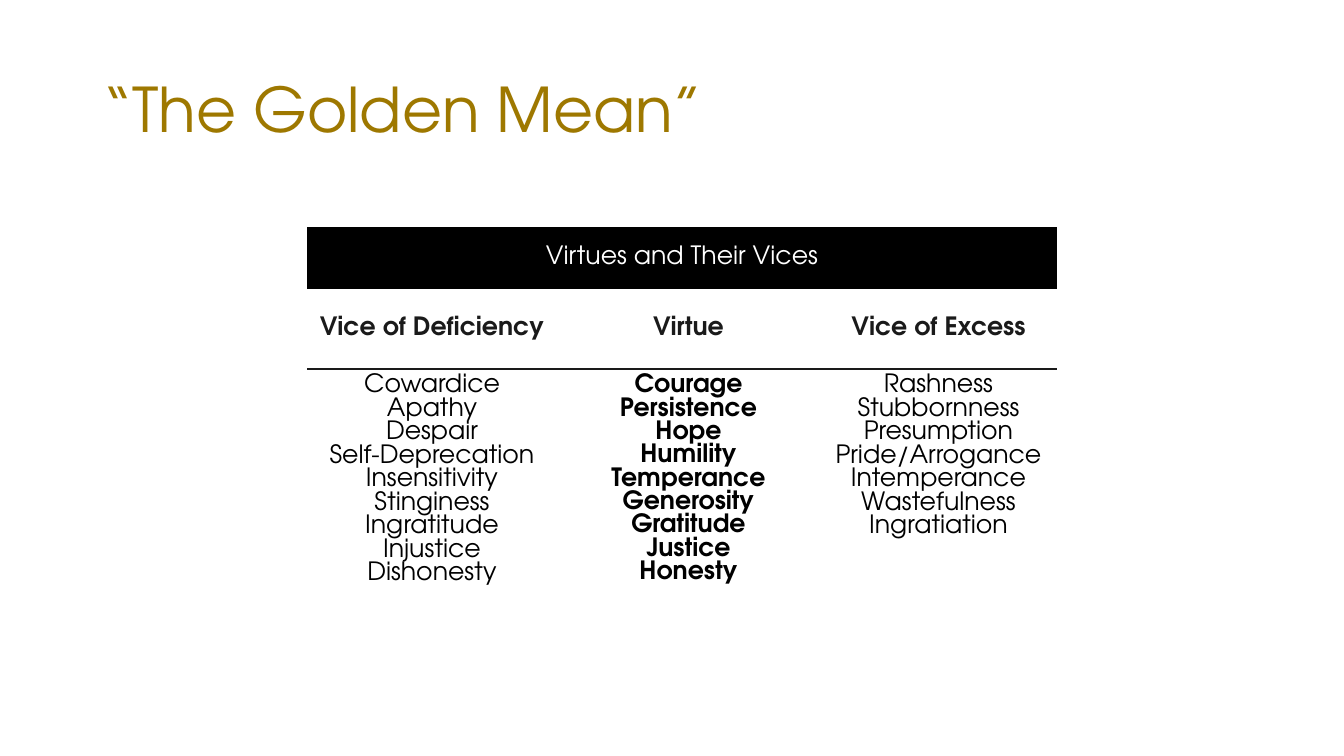
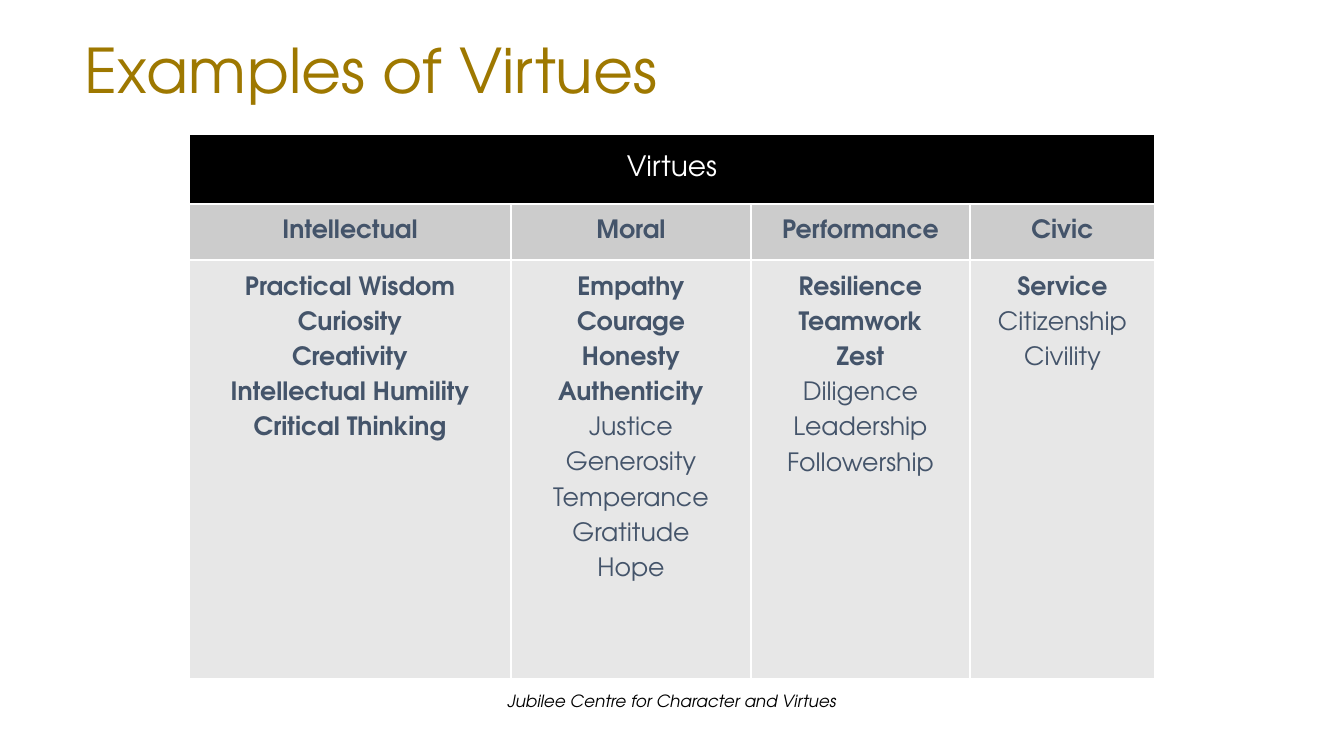
from lxml.etree import SubElement
from pptx import Presentation
from pptx.dml.color import RGBColor
from pptx.enum.text import MSO_ANCHOR as Anchor, PP_ALIGN as Align
from pptx.oxml.ns import qn
from pptx.util import Pt

PX = 914400 / 100.8
FONT = "TeX Gyre Adventor"
COLOURS = {
    "gold": "9E7800", "black": "000000", "ink": "1A1A1A", "white": "FFFFFF",
    "slate": "44546A", "heading": "CCCCCC", "body": "E7E7E7",
}
SIDES = ("lnL", "lnR", "lnT", "lnB")
WHITE_GRID = {side: ("white", 1) for side in SIDES}

GOLDEN_MEAN = {
    "banner": "Virtues and Their Vices",
    "columns": [
        ("Vice of Deficiency", 250, 0,
         ["Cowardice", "Apathy", "Despair", "Self-Deprecation", "Insensitivity",
          "Stinginess", "Ingratitude", "Injustice", "Dishonesty"]),
        ("Virtue", 263, 9,
         ["Courage", "Persistence", "Hope", "Humility", "Temperance",
          "Generosity", "Gratitude", "Justice", "Honesty"]),
        ("Vice of Excess", 237, 0,
         ["Rashness", "Stubbornness", "Presumption", "Pride/Arrogance",
          "Intemperance", "Wastefulness", "Ingratiation"]),
    ],
    "rows": [
        {"height": 62, "fill": "black", "colour": "white", "size": 18, "edges": {}},
        {"height": 80, "fill": "white", "colour": "ink", "size": 18,
         "edges": {"lnB": ("ink", 1.5)}},
        {"height": 328, "fill": "white", "colour": "black", "size": 18,
         "edges": {"lnT": ("ink", 1.5)}, "spacing": 1.0},
    ],
}

VIRTUES = {
    "banner": "Virtues",
    "columns": [
        ("Intellectual", 322, 5,
         ["Practical Wisdom", "Curiosity", "Creativity",
          "Intellectual Humility", "Critical Thinking"]),
        ("Moral", 240, 4,
         ["Empathy", "Courage", "Honesty", "Authenticity", "Justice",
          "Generosity", "Temperance", "Gratitude", "Hope"]),
        ("Performance", 219, 3,
         ["Resilience", "Teamwork", "Zest", "Diligence", "Leadership",
          "Followership"]),
        ("Civic", 185, 1, ["Service", "Citizenship", "Civility"]),
    ],
    "rows": [
        {"height": 70, "fill": "black", "colour": "white", "size": 20,
         "edges": WHITE_GRID},
        {"height": 56, "fill": "heading", "colour": "slate", "size": 18,
         "edges": WHITE_GRID},
        {"height": 418, "fill": "body", "colour": "slate", "size": 18,
         "edges": WHITE_GRID, "spacing": 1.5},
    ],
}


def px(length):
    """Turn a length in px into EMU."""
    return round(length * PX)


def rgb(name):
    """Look up a colour by name."""
    return RGBColor.from_string(COLOURS[name])


def write_lines(frame, lines, size, colour, bold_count=0, italic=False,
                align=Align.CENTER, spacing=1.0):
    """Write one paragraph per line, the first bold_count of them bold."""
    for index, line in enumerate(lines):
        paragraph = frame.add_paragraph() if index else frame.paragraphs[0]
        for name, value in {"alignment": align, "line_spacing": spacing}.items():
            setattr(paragraph, name, value)
        run = paragraph.add_run()
        run.text = line
        formats = {"name": FONT, "size": Pt(size), "bold": index < bold_count,
                   "italic": italic}
        for name, value in formats.items():
            setattr(run.font, name, value)
        run.font.color.rgb = rgb(colour)


def add_label(slide, box, text, anchor, **style):
    """Place a wrapped line of text in a box."""
    frame = slide.shapes.add_textbox(*map(px, box)).text_frame
    frame.word_wrap = True
    frame.vertical_anchor = anchor
    write_lines(frame, [text], **style)


def add_title(slide, left, top, text):
    """Place a slide title."""
    add_label(slide, (left, top, 1159, 146), text, Anchor.MIDDLE, size=44,
              colour="gold", align=Align.LEFT, spacing=0.9)


def style_cell(cell, row):
    """Give a cell the borders and fill of its row."""
    properties = cell._tc.get_or_add_tcPr()
    for side in SIDES:
        colour, width = row["edges"].get(side, (None, 0))
        line = SubElement(properties, qn(f"a:{side}"), w=str(Pt(width)))
        if colour:
            fill = SubElement(line, qn("a:solidFill"))
            SubElement(fill, qn("a:srgbClr"), val=COLOURS[colour])
        else:
            SubElement(line, qn("a:noFill"))
    cell.fill.solid()
    cell.fill.fore_color.rgb = rgb(row["fill"])


def add_virtue_table(slide, left, top, content):
    """Place a table with a banner, column headings and one list per column."""
    columns, rows = content["columns"], content["rows"]
    width = sum(column[1] for column in columns)
    height = sum(row["height"] for row in rows)
    table = slide.shapes.add_table(
        len(rows), len(columns), *map(px, (left, top, width, height))).table
    table.first_row = table.horz_banding = False
    for index, row in enumerate(rows):
        table.rows[index].height = px(row["height"])
        for cell in table.rows[index].cells:
            style_cell(cell, row)

    def fill_cell(row_index, column_index, lines, bold_count):
        """Write lines in a cell in the style of its row."""
        row = rows[row_index]
        cell = table.cell(row_index, column_index)
        cell.vertical_anchor = Anchor.TOP if row_index == 2 else Anchor.MIDDLE
        write_lines(cell.text_frame, lines, row["size"], row["colour"],
                    bold_count, spacing=row.get("spacing", 1.0))

    table.cell(0, 0).merge(table.cell(0, len(columns) - 1))
    fill_cell(0, 0, [content["banner"]], 0)
    for index, (heading, column_width, bold_count, entries) in enumerate(columns):
        table.columns[index].width = px(column_width)
        fill_cell(1, index, [heading], 1)
        fill_cell(2, index, entries, bold_count)


def build_golden_mean(slide):
    """Build the slide of virtues between two vices."""
    add_title(slide, 93, 40, "“The Golden Mean”")
    add_virtue_table(slide, 307, 227, GOLDEN_MEAN)


def build_examples(slide):
    """Build the slide of virtues by kind, with its source line."""
    add_title(slide, 75, 1, "Examples of Virtues")
    add_label(slide, (229, 686, 886, 30), "Jubilee Centre for Character and Virtues",
              Anchor.TOP, size=12, colour="black", italic=True)
    add_virtue_table(slide, 189, 134, VIRTUES)


def main():
    """Build and save the presentation."""
    presentation = Presentation()
    presentation.slide_width, presentation.slide_height = px(1344), px(756)
    for build in (build_golden_mean, build_examples):
        build(presentation.slides.add_slide(presentation.slide_layouts[6]))
    presentation.save("out.pptx")


if __name__ == "__main__":
    main()
